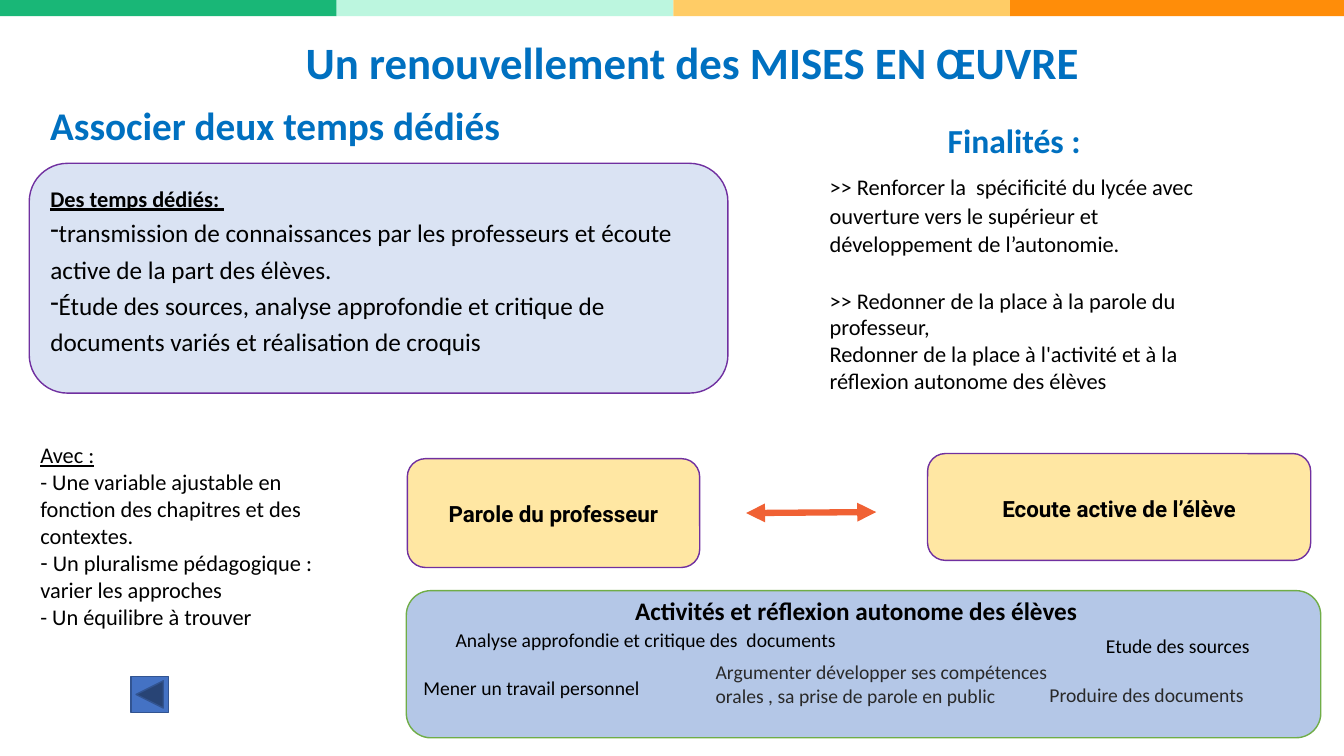
from lxml import etree
from pptx import Presentation
from pptx import util as u
from pptx.dml.color import RGBColor
from pptx.enum import shapes, text
from pptx.oxml import ns

Inches, Pt = u.Inches, u.Pt
KIND = shapes.MSO_SHAPE
MID = text.MSO_ANCHOR.MIDDLE
TOP = text.MSO_ANCHOR.TOP
LEFT = text.PP_ALIGN.LEFT
CENTER = text.PP_ALIGN.CENTER
HUES = {
    "black": "000000", "gray": "292929", "title": "0070C0",
    "violet": "7030A0", "leaf": "70AD47", "navy": "325491",
    "cream": "FFE7A3", "pale": "DAE3F3", "sky": "B4C7E7",
    "button": "4472C4", "arrow": "F06134",
    "green": "19B777", "mint": "BCF6DF", "gold": "FFCC66", "orange": "FF8D09",
}


def hue(name):
    return RGBColor.from_string(HUES[name])


def place(item, box):
    item.left, item.top, item.width, item.height = map(Inches, box)


def set_up(frame, wrap=True, anchor=TOP):
    frame.auto_size = text.MSO_AUTO_SIZE.NONE
    frame.word_wrap = wrap
    frame.vertical_anchor = anchor
    return frame


def add_para(frame, words, size, color="black", bold=False, under=False,
             font="Calibri", align=LEFT, lines=1.0, before=0, after=0, mark=None):
    para = frame.paragraphs[0]
    if para.runs:
        para = frame.add_paragraph()
    para.alignment = align
    para.line_spacing = lines
    para.space_before, para.space_after = Pt(before), Pt(after)
    props = para._p.get_or_add_pPr()
    props.set("marL", "0")
    props.set("indent", "0")
    if mark:
        etree.SubElement(props, ns.qn("a:buChar")).set("char", mark)
    else:
        etree.SubElement(props, ns.qn("a:buNone"))
    run = para.add_run()
    run.text = words
    face = run.font
    face.name, face.size = font, Pt(size)
    face.bold, face.underline = bold, under
    face.color.rgb = hue(color)


def add_box(slide, kind, box, fill, line=None, anchor=TOP):
    shape = slide.shapes.add_shape(kind, *map(Inches, box))
    shape.shadow.inherit = False
    shape.fill.solid()
    shape.fill.fore_color.rgb = hue(fill)
    if line:
        shape.line.color.rgb = hue(line)
        shape.line.width = Pt(1)
    else:
        shape.line.fill.background()
    return set_up(shape.text_frame, anchor=anchor)


def add_text(slide, box, wrap=True):
    return set_up(slide.shapes.add_textbox(*map(Inches, box)).text_frame, wrap)


def add_arrow(slide, start, end, color):
    arrow = slide.shapes.add_connector(
        shapes.MSO_CONNECTOR.STRAIGHT, *map(Inches, start + end))
    arrow.line.color.rgb = hue(color)
    arrow.line.width = Pt(4.5)
    line = arrow.line._get_or_add_ln()
    for tip in ("a:headEnd", "a:tailEnd"):
        etree.SubElement(line, ns.qn(tip)).set("type", "triangle")
    etree.SubElement(arrow._element.spPr, ns.qn("a:effectLst"))


def add_heads(slide):
    for i, color in enumerate(("green", "mint", "gold", "orange")):
        add_box(slide, KIND.RECTANGLE, (3.34 * i, 0, 3.34, 0.16), color)
    title = slide.shapes.title
    place(title, (2.9, 0.29, 7.94, 0.64))
    add_para(set_up(title.text_frame, False), "Un renouvellement des MISES EN ŒUVRE",
             32, "title", True, align=CENTER)
    add_para(add_text(slide, (0.4, 0.96, 4.8, 0.57), False),
             "Associer deux temps dédiés", 28, "title", True)


def add_times(slide):
    frame = add_box(slide, KIND.ROUNDED_RECTANGLE, (0.29, 1.62, 6.93, 2.28),
                    "pale", "violet")
    add_para(frame, "Des temps dédiés: ", 16, bold=True, under=True, lines=1.2)
    for words in (
        "transmission de connaissances par les professeurs et écoute active "
        "de la part des élèves.",
        "Étude des sources, analyse approfondie et critique de documents variés "
        "et réalisation de croquis",
    ):
        add_para(frame, words, 18, lines=1.2, mark="-")


def add_goals(slide):
    frame = add_text(slide, (8.13, 1.11, 3.86, 2.87))
    add_para(frame, "Finalités :", 24, "title", True, align=CENTER,
             lines=1.07, after=8)
    add_para(frame, ">> Renforcer la  spécificité du lycée avec ouverture vers "
             "le supérieur et  développement de l’autonomie.", 16, lines=1.07)
    add_para(frame, ">> Redonner de la place à la parole du professeur,", 16, before=21)
    add_para(frame, "Redonner de la place à l'activité et à la réflexion autonome "
             "des élèves", 16)


def add_means(slide):
    body = slide.placeholders[1]
    place(body, (0.3, 4.33, 2.92, 1.99))
    frame = set_up(body.text_frame)
    add_para(frame, "Avec :", 16, under=True)
    add_para(frame, "- Une variable ajustable en fonction des chapitres et des "
             "contextes.", 16)
    add_para(frame, " Un pluralisme pédagogique : varier les approches", 16, mark="-")
    add_para(frame, "- Un équilibre à trouver", 16)


def add_roles(slide):
    for box, words, lines in (
        ((4.04, 4.55, 2.9, 1.08), "Parole du professeur", 1.07),
        ((9.2, 4.5, 3.8, 1.06), "Ecoute active de l’élève", 1.15),
    ):
        frame = add_box(slide, KIND.ROUNDED_RECTANGLE, box, "cream", "violet", MID)
        add_para(frame, words, 16, bold=True, font="Roboto", align=CENTER, lines=lines)
    add_arrow(slide, (7.4, 5.09), (8.69, 5.08), "arrow")


def add_tasks(slide):
    frame = add_box(slide, KIND.ROUNDED_RECTANGLE, (4.03, 5.86, 9.07, 1.46),
                    "sky", "leaf", MID)
    frame.margin_top = Inches(0.52)
    add_para(frame, "Mener un travail personnel", 14)
    for box, words, color, wrap in (
        ((4.42, 6.18, 4.07, 0.34), "Analyse approfondie et critique des  documents",
         "black", False),
        ((10.87, 6.24, 1.65, 0.34), "Etude des sources", "black", False),
        ((7, 6.5, 3.8, 0.57), "Argumenter développer ses compétences orales , "
         "sa prise de parole en public", "gray", True),
        ((10.31, 6.73, 2.16, 0.34), "Produire des documents", "gray", False),
    ):
        add_para(add_text(slide, box, wrap), words, 14, color)
    add_para(add_text(slide, (6.2, 5.86, 4.62, 0.4), False),
             "Activités et réflexion autonome des élèves", 18, bold=True)


def main():
    deck = Presentation()
    deck.slide_width, deck.slide_height = Inches(13.33), Inches(7.5)
    slide = deck.slides.add_slide(deck.slide_layouts[1])
    add_heads(slide)
    add_times(slide)
    add_goals(slide)
    add_means(slide)
    add_roles(slide)
    add_tasks(slide)
    add_box(slide, KIND.ACTION_BUTTON_BACK_OR_PREVIOUS, (1.3, 6.71, 0.37, 0.36),
            "button", "navy")
    deck.save("out.pptx")


if __name__ == "__main__":
    main()
